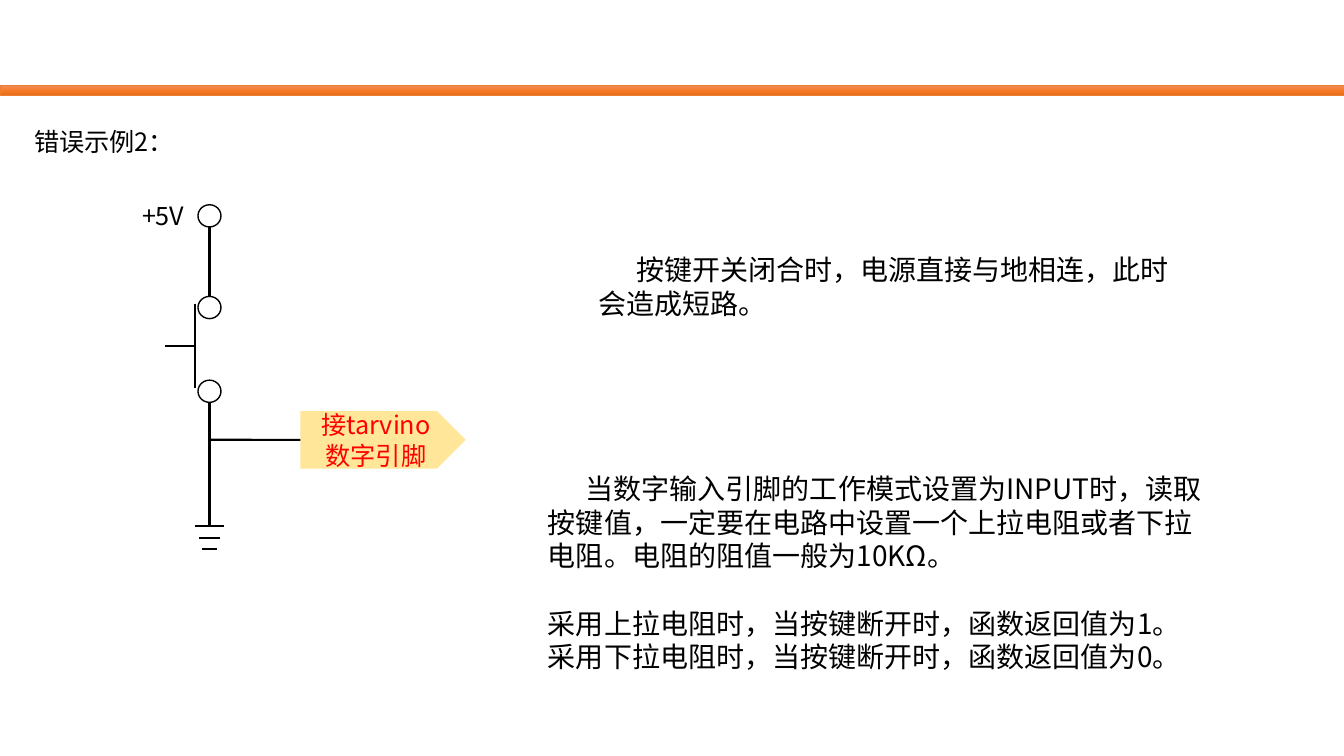
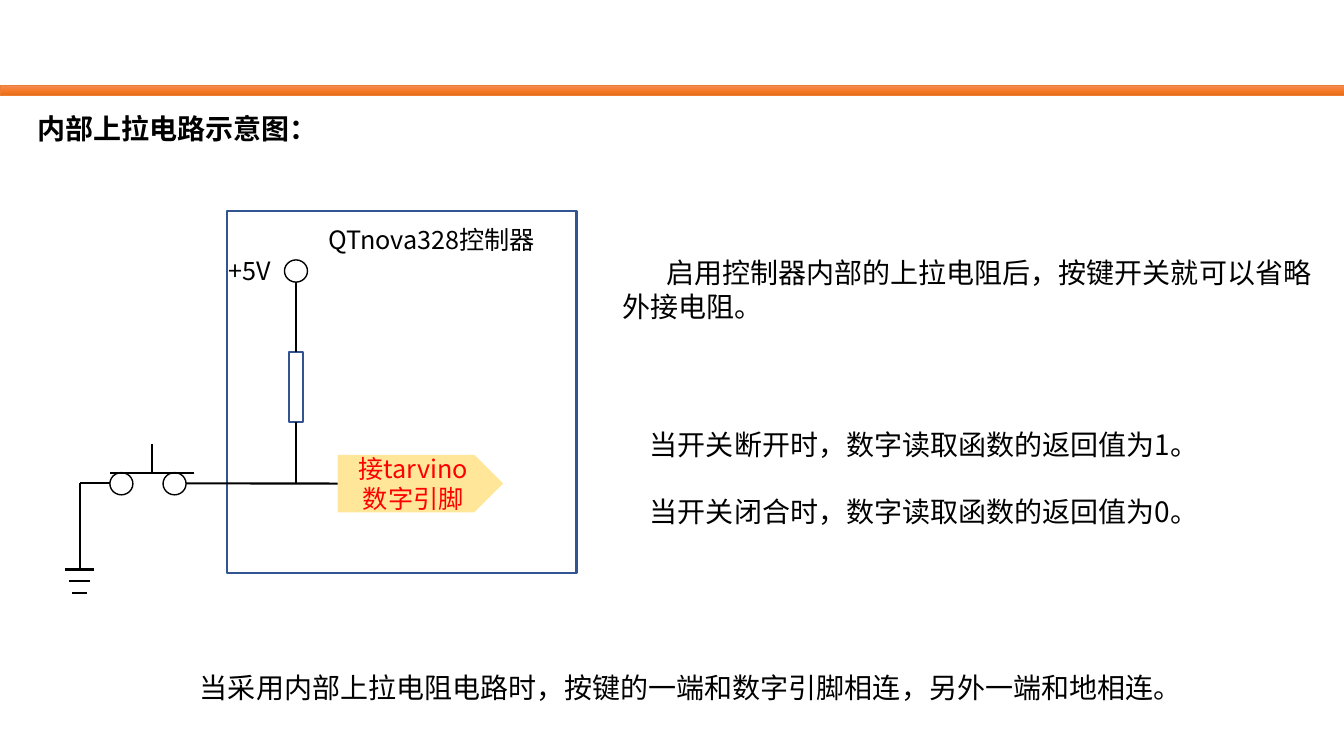
from copy import deepcopy

from lxml import etree
from pptx import Presentation, util as u
from pptx.dml.color import RGBColor
from pptx.enum import shapes, text
from pptx.oxml import ns

Cm, Pt = u.Cm, u.Pt
rgb = RGBColor.from_string
MSO = shapes.MSO_SHAPE

FONT = "Noto Sans CJK SC"
BLACK, RED, BLUE, ORANGE, YELLOW = "000000", "FF0000", "325491", "ED7D31", "FFE699"
BAND_STOPS = [(0, "F18C57"), (0.5, "F67B28"), (1, "E56C19")]
CIRCLE_W, CIRCLE_H = 0.58, 0.56
TAG_W, TAG_H = 4.17, 1.45
GROUND_BARS = [(0, 0.37), (0.3, 0.27), (0.59, 0.19)]  # drop, half width


def add_box(s, kind, x, y, w, h, line=None, width=1, fill=None):
    sp = s.shapes.add_shape(kind, Cm(x), Cm(y), Cm(w), Cm(h))
    sp.shadow.inherit = False
    if fill:
        sp.fill.solid()
        sp.fill.fore_color.rgb = rgb(fill)
    else:
        sp.fill.background()
    if line:
        sp.line.color.rgb = rgb(line)
        sp.line.width = Pt(width)
    else:
        sp.line.fill.background()
    return sp


def add_text(tf, paras, size, color=BLACK, bold=False, indent=0, align=None):
    """Each paragraph is a pair: its text and the space before it in points."""
    tf.word_wrap = True
    for i, (words, gap) in enumerate(paras):
        p = tf.paragraphs[0] if i == 0 else tf.add_paragraph()
        p.alignment = align
        p.line_spacing = Pt(size * 1.2)
        p.space_before = Pt(gap)
        if indent and i == 0:
            p._p.get_or_add_pPr().set("indent", str(Cm(indent)))
        r = p.add_run()
        r.text = words
        r.font.name, r.font.size, r.font.bold = FONT, Pt(size), bold
        r.font.color.rgb = rgb(color)
        etree.SubElement(r._r.get_or_add_rPr(), ns.qn("a:ea"), typeface=FONT)


# Contents: positions in cm; a wire end is a point or a (shape name, side) pair
slides = [
    {
        "boxes": {},
        "circles": [(4.99, 5.16), (4.99, 7.47), (4.99, 9.58)],
        "tag": (7.57, 10.36),
        "ground": (5.28, 13.25),
        "wires": [
            ((5.28, 5.72), (5.28, 7.47)),
            ((5.28, 10.14), (5.28, 13.25)),
            ((4.92, 7.65), (4.92, 9.78)),
            ((4.17, 8.71), (4.92, 8.71)),
            (("tag", 1), (5.28, 11.08)),
        ],
        "texts": [
            ((3.33, 4.93, 2.51, 1.02), [("+5V", 0)], 18, {}),
            ((0.61, 3.07, 8.61, 1.02), [("错误示例2：", 0)], 18, {}),
            ((14.83, 6.25, 15.47, 1.96),
             [("按键开关闭合时，电源直接与地相连，此时会造成短路。", 0)], 20, {"indent": 0.95}),
            ((13.56, 11.76, 17.09, 5.38),
             [("当数字输入引脚的工作模式设置为INPUT时，读取按键值，一定要在电路中"
               "设置一个上拉电阻或者下拉电阻。电阻的阻值一般为10KΩ。", 0),
              ("采用上拉电阻时，当按键断开时，函数返回值为1。", 24),
              ("采用下拉电阻时，当按键断开时，函数返回值为0。", 0)], 20, {"indent": 0.95}),
        ],
    },
    {
        "boxes": {"chip": (5.72, 5.31, 8.81, 9.14), "resistor": (7.29, 8.86, 0.34, 1.78)},
        "circles": [(4.11, 11.91), (2.77, 11.91), (7.17, 6.55)],
        "tag": (8.51, 11.46),
        "ground": (2.01, 14.35),
        "wires": [
            ((2.01, 12.18), (2.01, 14.35)),
            (("tag", 1), (4.69, 12.18)),
            ((2.77, 12.18), (2.01, 12.18)),
            ((7.46, 7.11), ("resistor", 0)),
            (("resistor", 2), (7.46, 12.18)),
            ((4.9, 11.91), (2.77, 11.91)),
            ((3.84, 11.18), (3.84, 11.91)),
        ],
        "texts": [
            ((15.44, 6.32, 18.26, 1.96),
             [("启用控制器内部的上拉电阻后，按键开关就可以省略外接电阻。", 0)], 20, {"indent": 1.1}),
            ((5.51, 6.32, 2.51, 1.02), [("+5V", 0)], 18, {}),
            ((8.03, 5.54, 6.15, 1.02), [("QTnova328控制器", 0)], 18, {}),
            ((16.13, 10.64, 15.72, 3.68),
             [("当开关断开时，数字读取函数的返回值为1。", 0),
              ("当开关闭合时，数字读取函数的返回值为0。", 24)], 20, {}),
            ((3.84, 16.76, 28.9, 1.12),
             [("当采用内部上拉电阻电路时，按键的一端和数字引脚相连，另外一端和地相连。", 0)],
             20, {"indent": 0.95}),
            ((0.69, 2.69, 18.36, 1.12), [("内部上拉电路示意图：", 0)], 20, {"bold": True}),
        ],
    },
]

prs = Presentation()
prs.slide_width, prs.slide_height = Cm(33.87), Cm(19.05)
blank = prs.slide_layouts[6]

for n, content in enumerate(slides):
    s = prs.slides.add_slide(blank)

    # Orange band, moved once to the shared layout
    if n == 0:
        band = add_box(s, MSO.RECTANGLE, 0, 2.16, 33.87, 0.25, ORANGE, 0.5)
        band.fill.gradient()
        band.fill.gradient_angle = 270
        gs_lst = band.element.spPr.find(".//" + ns.qn("a:gsLst"))
        gs_lst.append(deepcopy(gs_lst[-1]))
        for stop, (position, color) in zip(band.fill.gradient_stops, BAND_STOPS):
            stop.position = position
            stop.color.rgb = rgb(color)
        blank.shapes.element.append(band.element)

    # Chip, resistor and terminals
    parts = {}
    for name, place in content["boxes"].items():
        parts[name] = add_box(s, MSO.RECTANGLE, *place, BLUE, 1.5)
    for x, y in content["circles"]:
        add_box(s, MSO.OVAL, x, y, CIRCLE_W, CIRCLE_H, BLACK)

    # Pin tag
    tag = add_box(s, MSO.PENTAGON, *content["tag"], TAG_W, TAG_H, fill=YELLOW)
    tag.text_frame.vertical_anchor = text.MSO_ANCHOR.MIDDLE
    add_text(tag.text_frame, [("接tarvino数字引脚", 0)], 18, RED, align=text.PP_ALIGN.CENTER)
    parts["tag"] = tag

    # Wires and ground symbol
    gx, gy = content["ground"]
    bars = [((gx - half, gy + drop), (gx + half, gy + drop)) for drop, half in GROUND_BARS]
    for ends in content["wires"] + bars:
        points = [(0, 0) if end[0] in parts else end for end in ends]
        wire = s.shapes.add_connector(
            shapes.MSO_CONNECTOR.STRAIGHT, *[Cm(v) for point in points for v in point])
        for end, connect in zip(ends, (wire.begin_connect, wire.end_connect)):
            if end[0] in parts:
                connect(parts[end[0]], end[1])
        wire.line.color.rgb = rgb(BLACK)
        wire.line.width = Pt(1.5)
        etree.SubElement(wire.element.spPr, ns.qn("a:effectLst"))

    # Labels and explanations
    for place, paras, size, style in content["texts"]:
        tf = s.shapes.add_textbox(*[Cm(v) for v in place]).text_frame
        tf.auto_size = text.MSO_AUTO_SIZE.SHAPE_TO_FIT_TEXT
        add_text(tf, paras, size, **style)

prs.save("out.pptx")
